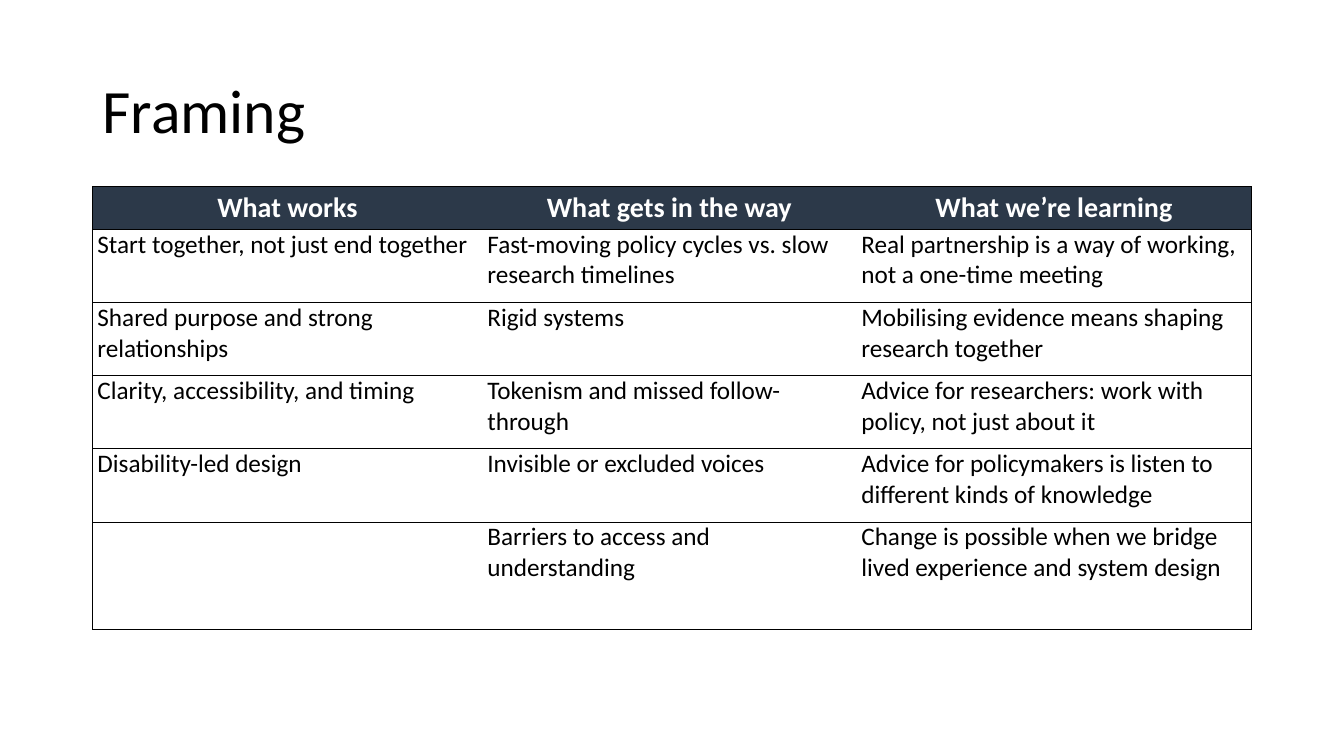
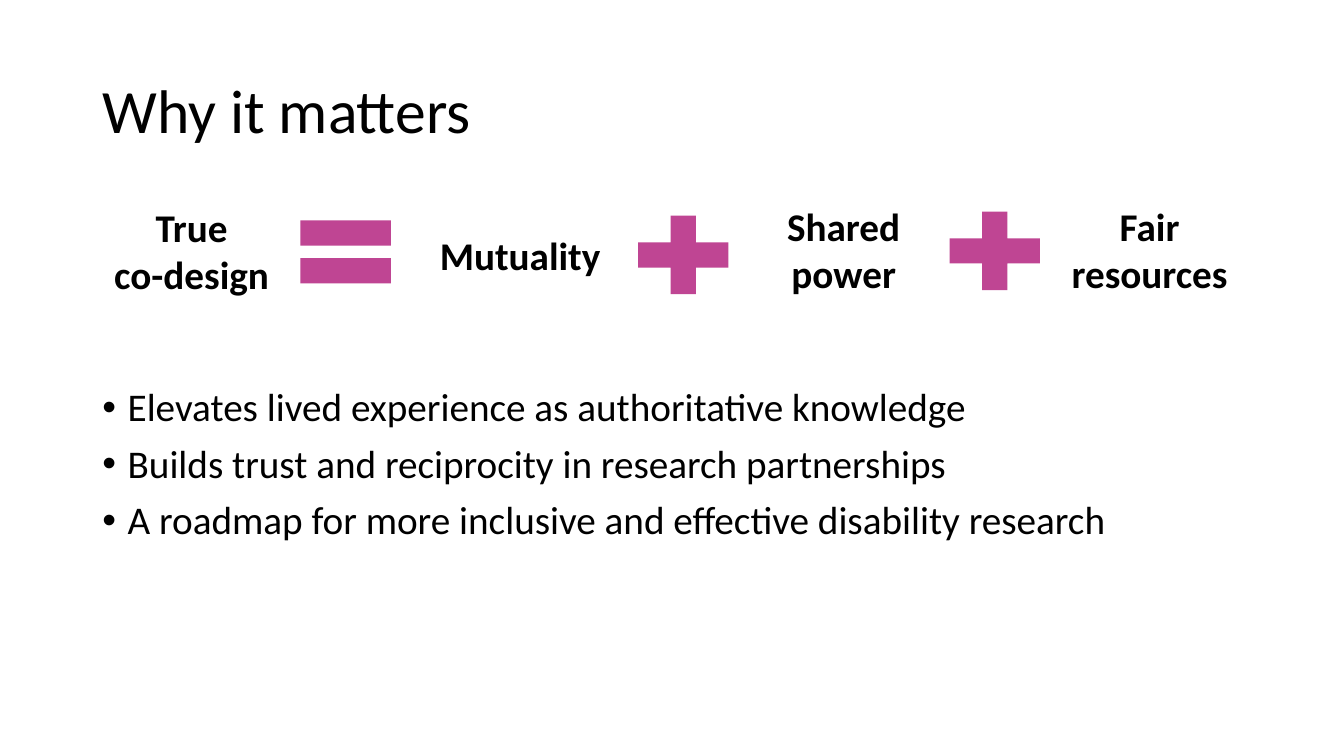
"""Build two slides: a framing table and a co-design equation with its benefits."""
from lxml.etree import SubElement
from pptx import Presentation
from pptx.dml.color import RGBColor
from pptx.enum.shapes import MSO_SHAPE
from pptx.enum.text import MSO_ANCHOR, MSO_AUTO_SIZE, PP_ALIGN
from pptx.oxml.ns import qn
from pptx.util import Pt

FONT = "Calibri"
BLACK, WHITE, NAVY, MAGENTA = "000000", "FFFFFF", "2C3949", "BF4593"
LEFT, WIDTH = 66, 828


def color(hex_text):
    return RGBColor.from_string(hex_text)


def write(frame, text, size=28, bold=False, fill=BLACK, align=PP_ALIGN.LEFT,
          spacing=1.0, gap=0, bullet=None):
    frame.word_wrap = True
    for index, line in enumerate(text.split("\n")):
        para = frame.add_paragraph() if index else frame.paragraphs[0]
        para.text = line
        para.alignment = align
        para.line_spacing = spacing
        para.space_before = Pt(gap if index else 0)
        if bullet:
            properties = para._p.get_or_add_pPr()
            properties.set("marL", str(Pt(18)))
            properties.set("indent", str(Pt(-18)))
            SubElement(properties, qn("a:buFont"), typeface="Arial")
            SubElement(properties, qn("a:buChar"), char=bullet)
        for span in para.runs:
            span.font.name = FONT
            span.font.size = Pt(size)
            span.font.bold = bold
            span.font.color.rgb = color(fill)


deck = Presentation()
deck.slide_width, deck.slide_height = Pt(960), Pt(540)

pages = []
for heading, layout_index in (("Framing", 5), ("Why it matters", 1)):
    page = deck.slides.add_slide(deck.slide_layouts[layout_index])
    title = page.shapes.title
    title.left, title.top, title.width, title.height = Pt(LEFT), Pt(28.8), Pt(WIDTH), Pt(104.4)
    title.text_frame.vertical_anchor = MSO_ANCHOR.MIDDLE
    title.text_frame.auto_size = MSO_AUTO_SIZE.NONE
    write(title.text_frame, heading, size=44, spacing=0.9)
    pages.append(page)
framing_page, matters_page = pages

table_rows = [
    ("What works", "What gets in the way", "What we’re learning"),
    ("Start together, not just end together",
     "Fast-moving policy cycles vs. slow research timelines",
     "Real partnership is a way of working, not a one-time meeting"),
    ("Shared purpose and strong relationships",
     "Rigid systems",
     "Mobilising evidence means shaping research together"),
    ("Clarity, accessibility, and timing",
     "Tokenism and missed follow-through",
     "Advice for researchers: work with policy, not just about it"),
    ("Disability-led design",
     "Invisible or excluded voices",
     "Advice for policymakers is listen to different kinds of knowledge"),
    ("",
     "Barriers to access and understanding",
     "Change is possible when we bridge lived experience and system design"),
]
column_widths = (278.6, 267.1, 282.3)
row_heights = (30.4, 52.3, 52.3, 52.3, 52.3, 76.8)
table = framing_page.shapes.add_table(
    len(row_heights), len(column_widths), Pt(LEFT), Pt(133.2), Pt(WIDTH), Pt(sum(row_heights))).table
table.first_row = table.horz_banding = False
for column, width in zip(table.columns, column_widths):
    column.width = Pt(width)
for row_index, (row, height, texts) in enumerate(zip(table.rows, row_heights, table_rows)):
    row.height = Pt(height)
    header = row_index == 0
    for column_index, (cell, text) in enumerate(zip(row.cells, texts)):
        cell.margin_left = cell.margin_right = Pt(3.6)
        cell.margin_top = cell.margin_bottom = 0
        cell.vertical_anchor = MSO_ANCHOR.MIDDLE if header else MSO_ANCHOR.TOP
        properties = cell._tc.get_or_add_tcPr()
        drawn_sides = {"lnL": column_index == 0, "lnR": column_index == 2, "lnT": True, "lnB": True}
        for side, drawn in drawn_sides.items():
            border = SubElement(properties, qn(f"a:{side}"), w=str(Pt(0.5)))
            if drawn:
                SubElement(SubElement(border, qn("a:solidFill")), qn("a:srgbClr"), val=BLACK)
            else:
                SubElement(border, qn("a:noFill"))
        if header:
            cell.fill.solid()
            cell.fill.fore_color.rgb = color(NAVY)
            write(cell.text_frame, text, size=20, bold=True, fill=WHITE, align=PP_ALIGN.CENTER)
        else:
            cell.fill.background()
            write(cell.text_frame, text, size=18)

benefits = matters_page.placeholders[1]
benefits.left, benefits.top, benefits.width, benefits.height = Pt(LEFT), Pt(273.6), Pt(WIDTH), Pt(142)
benefits.text_frame.auto_size = MSO_AUTO_SIZE.NONE
write(benefits.text_frame,
      "Elevates lived experience as authoritative knowledge\n"
      "Builds trust and reciprocity in research partnerships\n"
      "A roadmap for more inclusive and effective disability research",
      spacing=0.9, gap=10, bullet="•")

for text, left, top, width, height in (
        ("True\vco-design", 74.2, 141.8, 125.3, 75),
        ("Mutuality", 298.8, 162, 145.4, 41),
        ("Shared\vpower", 540.7, 141.1, 123.8, 75),
        ("Fair\vresources", 756.7, 141.1, 128.9, 75)):
    box = matters_page.shapes.add_textbox(Pt(left), Pt(top), Pt(width), Pt(height))
    write(box.text_frame, text, bold=True, align=PP_ALIGN.CENTER)

for kind, left, top in (
        (MSO_SHAPE.MATH_EQUAL, 203, 141.8),
        (MSO_SHAPE.MATH_PLUS, 444.2, 144),
        (MSO_SHAPE.MATH_PLUS, 666.7, 141.1)):
    sign = matters_page.shapes.add_shape(kind, Pt(left), Pt(top), Pt(87.8), Pt(76.3))
    sign.shadow.inherit = False
    sign.fill.solid()
    sign.fill.fore_color.rgb = color(MAGENTA)
    sign.line.fill.background()

deck.save("out.pptx")
